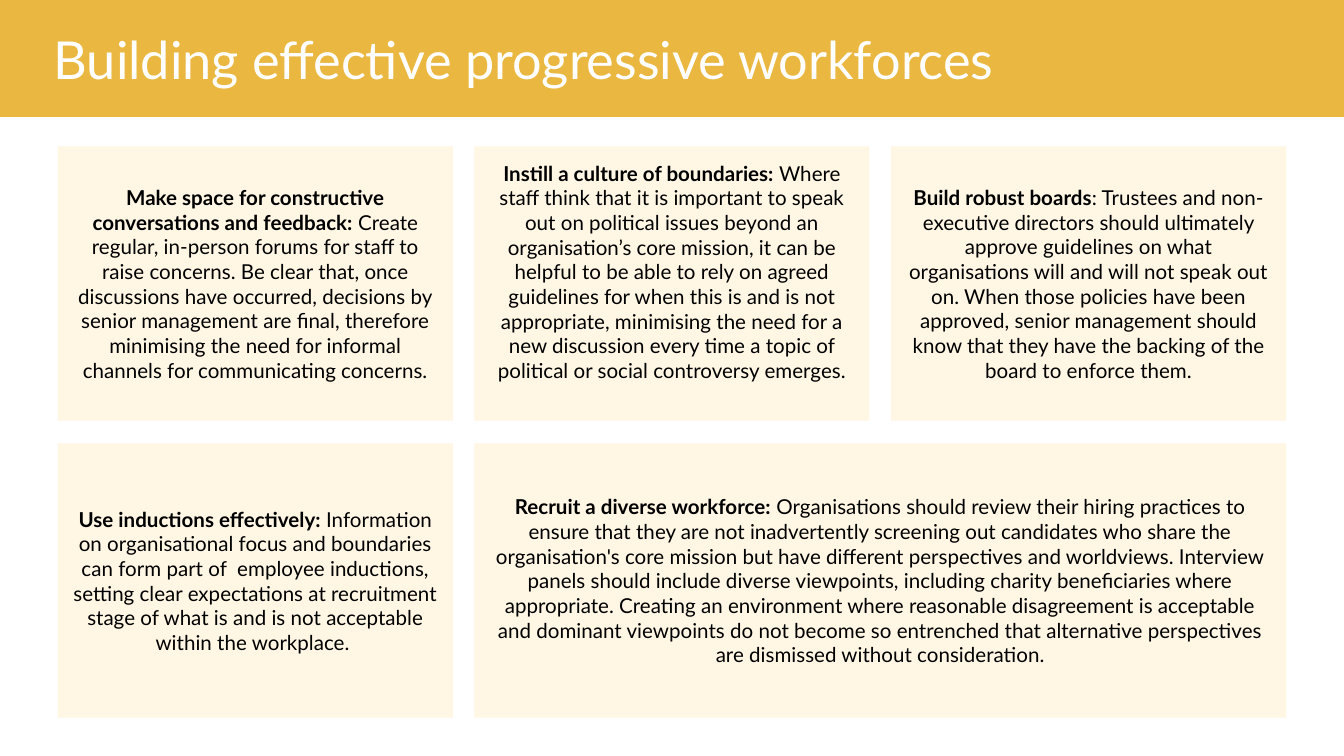
"""Build a slide with a title band and five cards on a three-column grid."""
import pptx
import pptx.util
import pptx.dml.color
import pptx.enum.shapes
import pptx.enum.text

Inches, Pt = pptx.util.Inches, pptx.util.Pt
RGBColor = pptx.dml.color.RGBColor

GOLD = RGBColor(0xEA, 0xB8, 0x41)
CREAM = RGBColor(0xFF, 0xF6, 0xE4)
WHITE = RGBColor(0xFF, 0xFF, 0xFF)
BLACK = RGBColor(0, 0, 0)
FONT = "Lato"

WIDTH = 10
HEIGHT = WIDTH * 9 / 16
BAND_H = 0.87
LEFT, TOP = 0.43, 1.09
CARD_W, CARD_H = 2.94, 2.04
STEP_X, STEP_Y = 3.1, 2.21
PAD = 0.1
LINE_H = 0.18

# column, row, columns spanned, blank lines kept below, heading, body
CARDS = [
    (0, 0, 1, 0, "Make space for constructive conversations and feedback:",
     " Create regular, in-person forums for staff to raise concerns. Be clear that, "
     "once discussions have occurred, decisions by senior management are final, "
     "therefore minimising the need for informal channels for communicating concerns."),
    (1, 0, 1, 1, "Instill a culture of boundaries:",
     " Where staff think that it is important to speak out on political issues beyond "
     "an organisation’s core mission, it can be helpful to be able to rely on agreed "
     "guidelines for when this is and is not appropriate, minimising the need for a "
     "new discussion every time a topic of political or social controversy emerges."),
    (0, 1, 1, 0, "Use inductions effectively: ",
     "Information on organisational focus and boundaries can form part of  employee "
     "inductions, setting clear expectations at recruitment stage of what is and is "
     "not acceptable within the workplace. "),
    (2, 0, 1, 0, "Build robust boards",
     ": Trustees and non-executive directors should ultimately approve guidelines on "
     "what organisations will and will not speak out on. When those policies have been "
     "approved, senior management should know that they have the backing of the board "
     "to enforce them."),
    (1, 1, 2, 0, "Recruit a diverse workforce:",
     " Organisations should review their hiring practices to ensure that they are not "
     "inadvertently screening out candidates who share the organisation's core mission "
     "but have different perspectives and worldviews. Interview panels should include "
     "diverse viewpoints, including charity beneficiaries where appropriate. Creating "
     "an environment where reasonable disagreement is acceptable and dominant "
     "viewpoints do not become so entrenched that alternative perspectives are "
     "dismissed without consideration."),
]


def fill_shape(sp, color):
    """Give a shape a solid fill."""
    sp.fill.solid()
    sp.fill.fore_color.rgb = color


def format_text(sp, size, color, align, pad_x, pad_y):
    """Set the frame, alignment and font of a shape's single paragraph."""
    tf = sp.text_frame
    tf.word_wrap = True
    tf.auto_size = pptx.enum.text.MSO_AUTO_SIZE.NONE
    tf.vertical_anchor = pptx.enum.text.MSO_ANCHOR.MIDDLE
    tf.margin_left = tf.margin_right = Inches(pad_x)
    tf.margin_top = tf.margin_bottom = Inches(pad_y)
    p = tf.paragraphs[0]
    p.alignment = align
    p.font.name, p.font.size = FONT, Pt(size)
    p.font.color.rgb = color


def add_title(s, text):
    """Turn the title placeholder into a full-width band."""
    sp = s.shapes.title
    sp.left, sp.top = 0, 0
    sp.width, sp.height = Inches(WIDTH), Inches(BAND_H)
    sp.text_frame.text = text
    fill_shape(sp, GOLD)
    format_text(sp, 28, WHITE, pptx.enum.text.PP_ALIGN.LEFT, 0.4, 0.2)


def add_card(s, col, row, span, blank_lines, heading, body):
    """Add a card with a bold heading that runs into its body."""
    sp = s.shapes.add_shape(
        pptx.enum.shapes.MSO_SHAPE.RECTANGLE,
        Inches(LEFT + col * STEP_X), Inches(TOP + row * STEP_Y),
        Inches(CARD_W + (span - 1) * STEP_X), Inches(CARD_H))
    sp.shadow.inherit = False
    sp.line.fill.background()
    fill_shape(sp, CREAM)
    p = sp.text_frame.paragraphs[0]
    for text, bold in ((heading, True), (body, False)):
        r = p.add_run()
        r.text, r.font.bold = text, bold
    format_text(sp, 11, BLACK, pptx.enum.text.PP_ALIGN.CENTER, PAD, PAD)
    sp.text_frame.margin_bottom = Inches(PAD + blank_lines * LINE_H)


def main():
    """Create the presentation and save it."""
    prs = pptx.Presentation()
    prs.slide_width, prs.slide_height = Inches(WIDTH), Inches(HEIGHT)
    s = prs.slides.add_slide(prs.slide_layouts.get_by_name("Title Only"))
    add_title(s, "Building effective progressive workforces")
    for card in CARDS:
        add_card(s, *card)
    prs.save("out.pptx")


if __name__ == "__main__":
    main()
